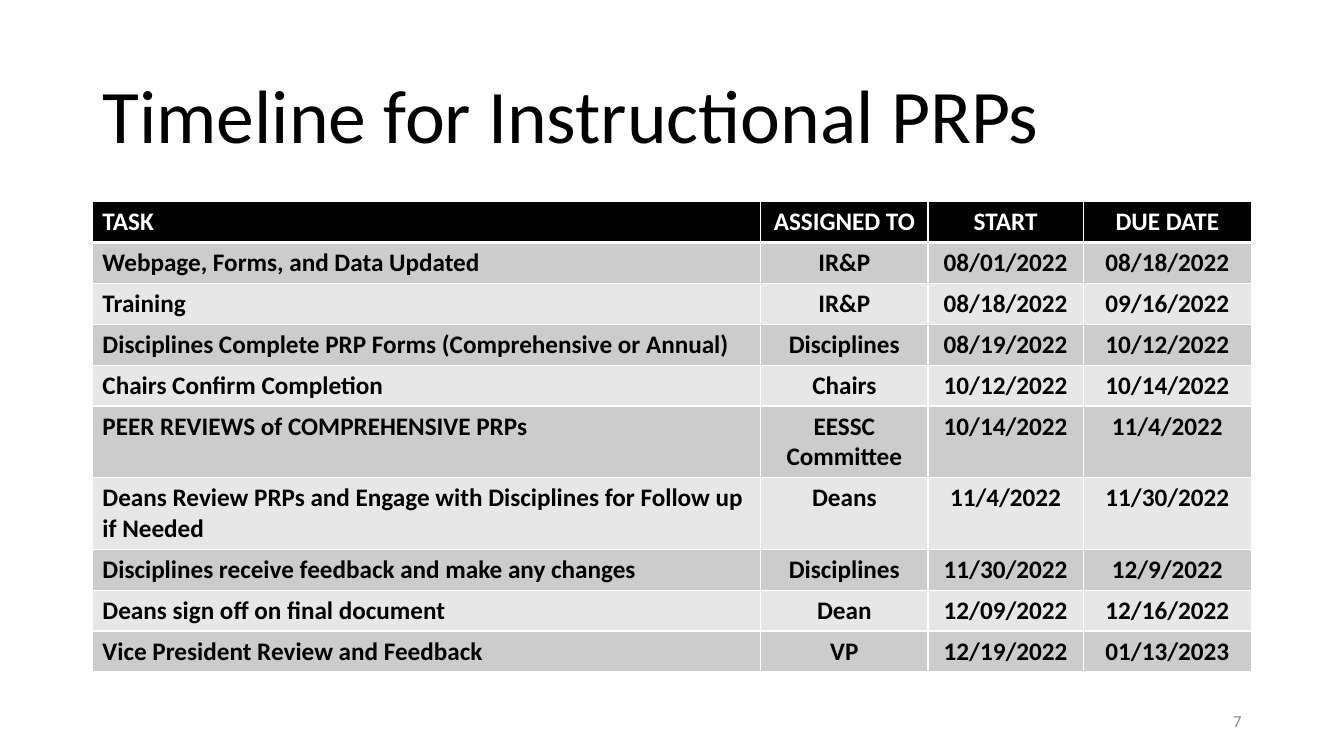
from lxml.etree import SubElement
from pptx import Presentation
from pptx.dml.color import RGBColor
from pptx.enum.text import MSO_ANCHOR, MSO_AUTO_SIZE, PP_ALIGN
from pptx.oxml.ns import qn
from pptx.util import Pt

FONT = "Calibri"
COLORS = {
    "black": "000000",
    "white": "FFFFFF",
    "dark band": "CCCCCC",
    "light band": "E7E7E7",
    "page number": "8C8C8C",
}
LEFT, WIDTH = 66, 828
COLUMN_WIDTHS = [477.4, 119.5, 110.9, 120.2]
LINE_ROW, DOUBLE_ROW = 29.2, 51.2
DOUBLE_ROWS = {5, 6}

TIMELINE = [
    ("TASK", "ASSIGNED TO", "START", "DUE DATE"),
    ("Webpage, Forms, and Data Updated", "IR&P", "08/01/2022", "08/18/2022"),
    ("Training", "IR&P", "08/18/2022", "09/16/2022"),
    ("Disciplines Complete PRP Forms (Comprehensive or Annual)",
     "Disciplines", "08/19/2022", "10/12/2022"),
    ("Chairs Confirm Completion", "Chairs", "10/12/2022", "10/14/2022"),
    ("PEER REVIEWS of COMPREHENSIVE PRPs",
     "EESSC Committee", "10/14/2022", "11/4/2022"),
    ("Deans Review PRPs and Engage with Disciplines for Follow up if Needed",
     "Deans", "11/4/2022", "11/30/2022"),
    ("Disciplines receive feedback and make any changes",
     "Disciplines", "11/30/2022", "12/9/2022"),
    ("Deans sign off on final document", "Dean", "12/09/2022", "12/16/2022"),
    ("Vice President Review and Feedback", "VP", "12/19/2022", "01/13/2023"),
]


def color(name):
    return RGBColor.from_string(COLORS[name])


def write(frame, text, size, color_name, align=PP_ALIGN.LEFT, bold=False):
    frame.text = text
    frame.word_wrap = True
    para = frame.paragraphs[0]
    para.alignment = align
    for span in para.runs:
        span.font.name = FONT
        span.font.size = Pt(size)
        span.font.bold = bold
        span.font.color.rgb = color(color_name)


def add_title(page, text):
    title = page.shapes.title
    title.left, title.top = Pt(LEFT), Pt(44.6)
    title.width, title.height = Pt(WIDTH), Pt(73.4)
    frame = title.text_frame
    write(frame, text, 54, "black")
    frame.auto_size = MSO_AUTO_SIZE.NONE
    frame.vertical_anchor = MSO_ANCHOR.BOTTOM
    frame.paragraphs[0].line_spacing = 0.9


def add_page_number(page, number):
    box = page.shapes.add_textbox(Pt(678), Pt(500.4), Pt(216), Pt(28.8))
    write(box.text_frame, number, 12, "page number", PP_ALIGN.RIGHT)
    box.text_frame.vertical_anchor = MSO_ANCHOR.MIDDLE


def set_borders(cell, widths):
    properties = cell._tc.get_or_add_tcPr()
    for side, width in widths.items():
        line = SubElement(properties, qn(f"a:ln{side}"), w=str(Pt(width)))
        fill = SubElement(line, qn("a:solidFill"))
        SubElement(fill, qn("a:srgbClr"), val=COLORS["white"])


def format_cell(cell, text, row, column):
    header = row == 0
    align = PP_ALIGN.CENTER if column else PP_ALIGN.LEFT
    write(cell.text_frame, text, 18, "white" if header else "black", align, True)
    # The rule under the header is thicker than the other cell borders
    set_borders(cell, {"L": 1, "R": 1, "T": 3 if row == 1 else 1,
                       "B": 3 if header else 1})
    band = "dark band" if row % 2 else "light band"
    cell.fill.solid()
    cell.fill.fore_color.rgb = color("black" if header else band)


def add_timeline(page, rows):
    heights = [DOUBLE_ROW if row in DOUBLE_ROWS else LINE_ROW
               for row in range(len(rows))]
    table = page.shapes.add_table(len(rows), len(COLUMN_WIDTHS), Pt(LEFT), Pt(144),
                                  Pt(WIDTH), Pt(sum(heights))).table
    for column, width in zip(table.columns, COLUMN_WIDTHS):
        column.width = Pt(width)
    for row, (texts, height) in enumerate(zip(rows, heights)):
        table.rows[row].height = Pt(height)
        for column, text in enumerate(texts):
            format_cell(table.cell(row, column), text, row, column)


def main():
    deck = Presentation()
    deck.slide_width, deck.slide_height = Pt(960), Pt(540)
    page = deck.slides.add_slide(deck.slide_layouts[5])

    # Heading
    add_title(page, "Timeline for Instructional PRPs")
    # Task table
    add_timeline(page, TIMELINE)
    # Footer
    add_page_number(page, "7")

    deck.save("out.pptx")


if __name__ == "__main__":
    main()
